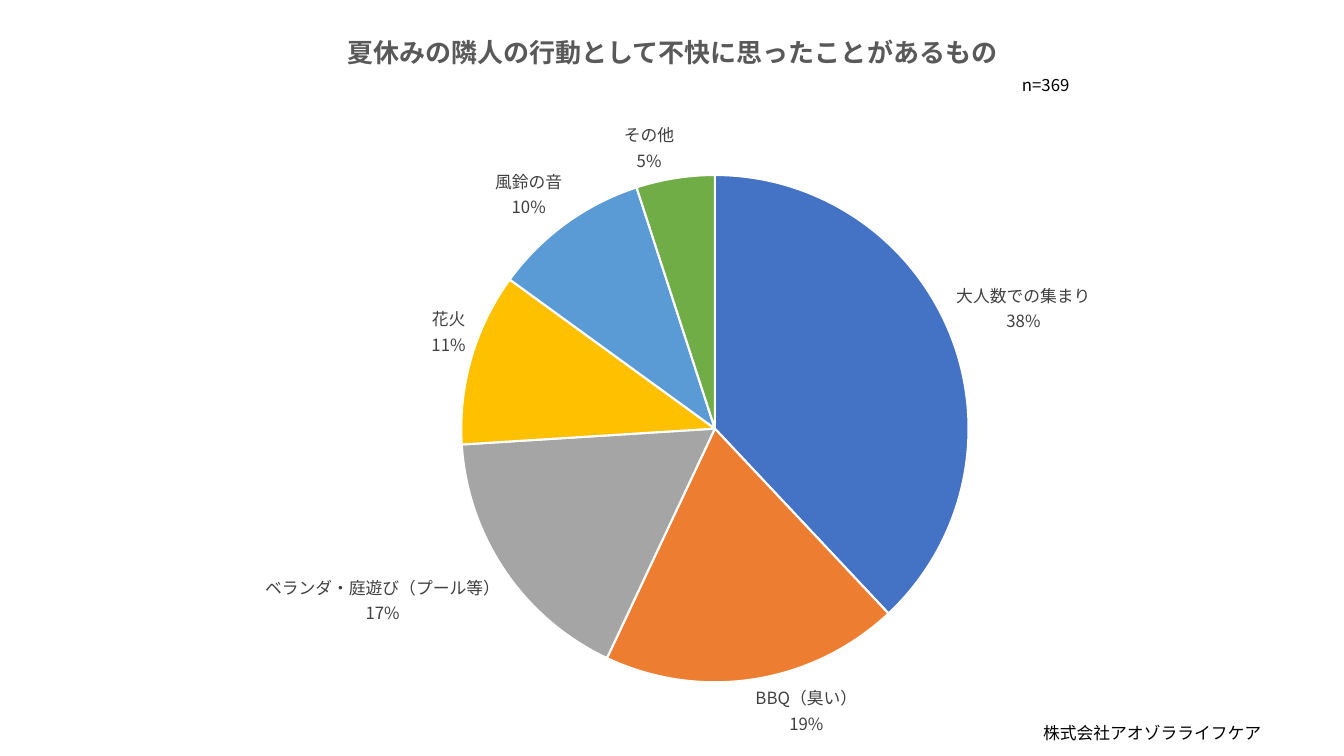
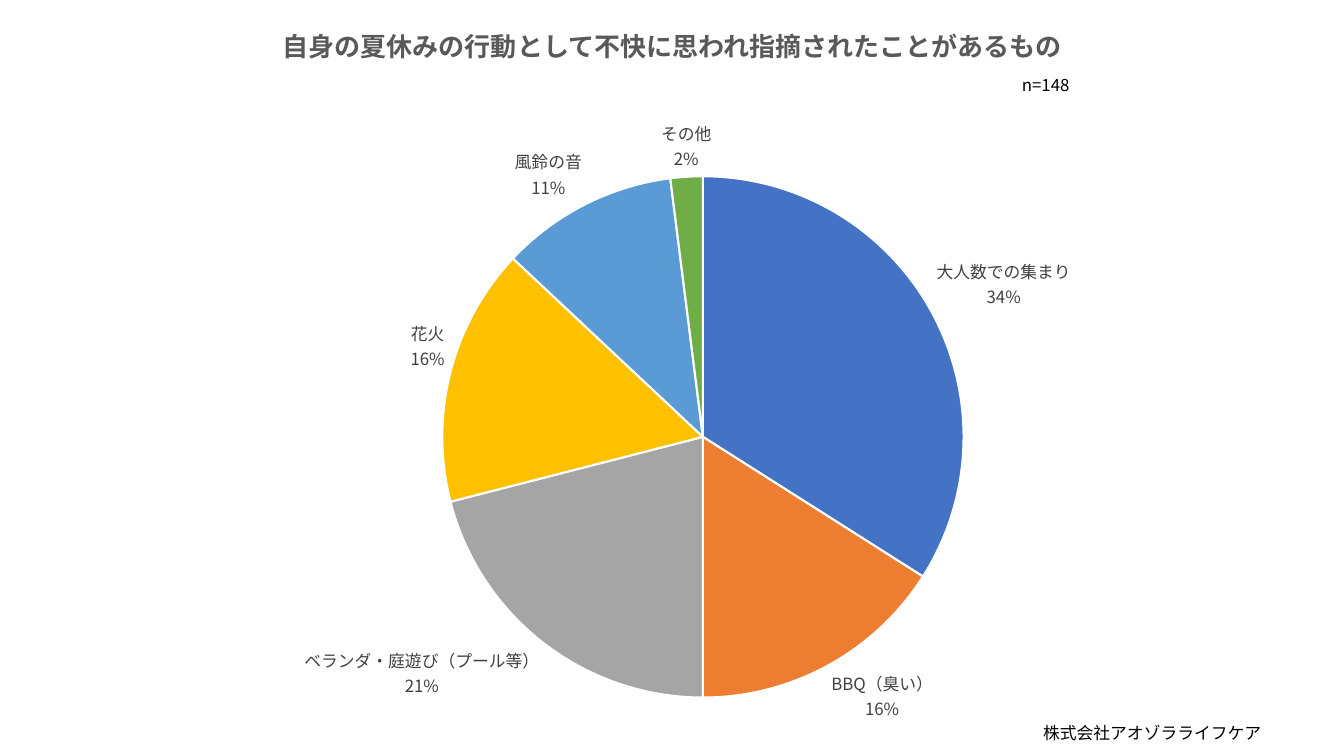
"""Build two survey slides, each with a labelled pie chart."""
from dataclasses import dataclass

from lxml.etree import SubElement
from pptx import Presentation
from pptx.chart.data import CategoryChartData as PieData
from pptx.dml.color import RGBColor as Rgb
from pptx.enum.chart import XL_CHART_TYPE as Kind, XL_LABEL_POSITION as Spot
from pptx.enum.text import PP_ALIGN as Align
from pptx.oxml import parse_xml
from pptx.oxml.ns import nsdecls, qn
from pptx.util import Pt

FONT = "Noto Sans CJK JP"
COLORS = {"title": "595959", "label": "404040", "text": "000000", "edge": "FFFFFF"}
SLICES = {
    "大人数での集まり": "4472C4",
    "BBQ（臭い）": "ED7D31",
    "ベランダ・庭遊び（プール等）": "A5A5A5",
    "花火": "FFC000",
    "風鈴の音": "5B9BD5",
    "その他": "70AD47",
}
FIRM = "株式会社アオゾラライフケア"


@dataclass(frozen=True)
class Box:
    left: float
    top: float
    width: float
    height: float

    def points(self) -> tuple:
        return tuple(Pt(n) for n in (self.left, self.top, self.width, self.height))


@dataclass(frozen=True)
class Survey:
    title: str
    head: Box
    count: int
    values: tuple
    center: tuple
    radius: float


FRAME = Box(27.4, 75.6, 905, 460.8)
COUNT = Box(722.9, 53.3, 74.2, 21.6)
FOOT = Box(738, 516.2, 177.8, 21.6)
SURVEYS = (
    Survey("夏休みの隣人の行動として不快に思ったことがあるもの",
           Box(231.8, 25.9, 496.8, 29.5), 369, (38, 19, 17, 11, 10, 5),
           (510.7, 306.2), 181.2),
    Survey("自身の夏休みの行動として不快に思われ指摘されたことがあるもの",
           Box(191.5, 21.6, 577.4, 29.5), 148, (34, 16, 21, 16, 11, 2),
           (502.1, 312.1), 186.2),
)


def style(font, size: float, color: str, bold: bool = False) -> None:
    font.name, font.size, font.bold = FONT, Pt(size), bold
    font.color.rgb = Rgb.from_string(COLORS[color])


def add_east(root) -> None:
    for latin in list(root.iter(qn("a:latin"))):
        east = SubElement(latin.getparent(), qn("a:ea"), typeface=FONT)
        latin.addnext(east)


def add_text(slide, text: str, box: Box, *, size: float = 12,
             color: str = "text", bold: bool = False, align=Align.LEFT) -> None:
    shape = slide.shapes.add_textbox(*box.points())
    frame = shape.text_frame
    frame.word_wrap = True
    frame.margin_top = frame.margin_bottom = 0
    para = frame.paragraphs[0]
    para.alignment = align
    run = para.add_run()
    run.text = text
    style(run.font, size, color, bold)
    add_east(shape.element)


def place_pie(chart, survey: Survey) -> None:
    across, down = survey.center
    size = 2 * survey.radius
    parts = {
        "x": (across - survey.radius - FRAME.left) / FRAME.width,
        "y": (down - survey.radius - FRAME.top) / FRAME.height,
        "w": size / FRAME.width,
        "h": size / FRAME.height,
    }
    modes = "".join(f'<c:{key}Mode val="edge"/>' for key in "xy")
    sizes = "".join(f'<c:{key} val="{part:.4f}"/>' for key, part in parts.items())
    area = chart.element.find(".//" + qn("c:plotArea"))
    for old in area.findall(qn("c:layout")):
        area.remove(old)
    area.insert(0, parse_xml(
        f'<c:layout {nsdecls("c")}><c:manualLayout><c:layoutTarget val="inner"/>'
        f'{modes}{sizes}</c:manualLayout></c:layout>'))


def add_labels(plot, chart) -> None:
    plot.has_data_labels = True
    labels = plot.data_labels
    labels.show_category_name = labels.show_value = True
    labels.show_percentage = False
    labels.number_format = r"0\%"
    labels.number_format_is_linked = False
    labels.position = Spot.OUTSIDE_END
    style(labels.font, 12, "label")
    root = chart.element.find(".//" + qn("c:dLbls"))
    split = SubElement(root, qn("c:separator"))
    split.text = "\n"
    root.find(qn("c:showBubbleSize")).addnext(split)


def add_pie(slide, survey: Survey) -> None:
    data = PieData()
    data.categories = list(SLICES)
    data.add_series("Series 1", survey.values)
    chart = slide.shapes.add_chart(Kind.PIE, *FRAME.points(), data).chart
    chart.has_title = chart.has_legend = False
    style(chart.font, 10, "text")
    plot = chart.plots[0]
    plot.vary_by_categories = True
    for index, color in enumerate(SLICES.values()):
        look = plot.series[0].points[index].format
        look.fill.solid()
        look.fill.fore_color.rgb = Rgb.from_string(color)
        look.line.color.rgb = Rgb.from_string(COLORS["edge"])
        look.line.width = Pt(1.5)
    add_labels(plot, chart)
    place_pie(chart, survey)
    add_east(chart.element)


def main() -> None:
    deck = Presentation()
    deck.slide_width, deck.slide_height = Pt(960), Pt(540)
    for survey in SURVEYS:
        slide = deck.slides.add_slide(deck.slide_layouts[6])
        add_pie(slide, survey)
        add_text(slide, f"n={survey.count}", COUNT)
        add_text(slide, survey.title, survey.head, size=18.6, color="title",
                 bold=True, align=Align.CENTER)
        add_text(slide, FIRM, FOOT)
    deck.save("out.pptx")


if __name__ == "__main__":
    main()
